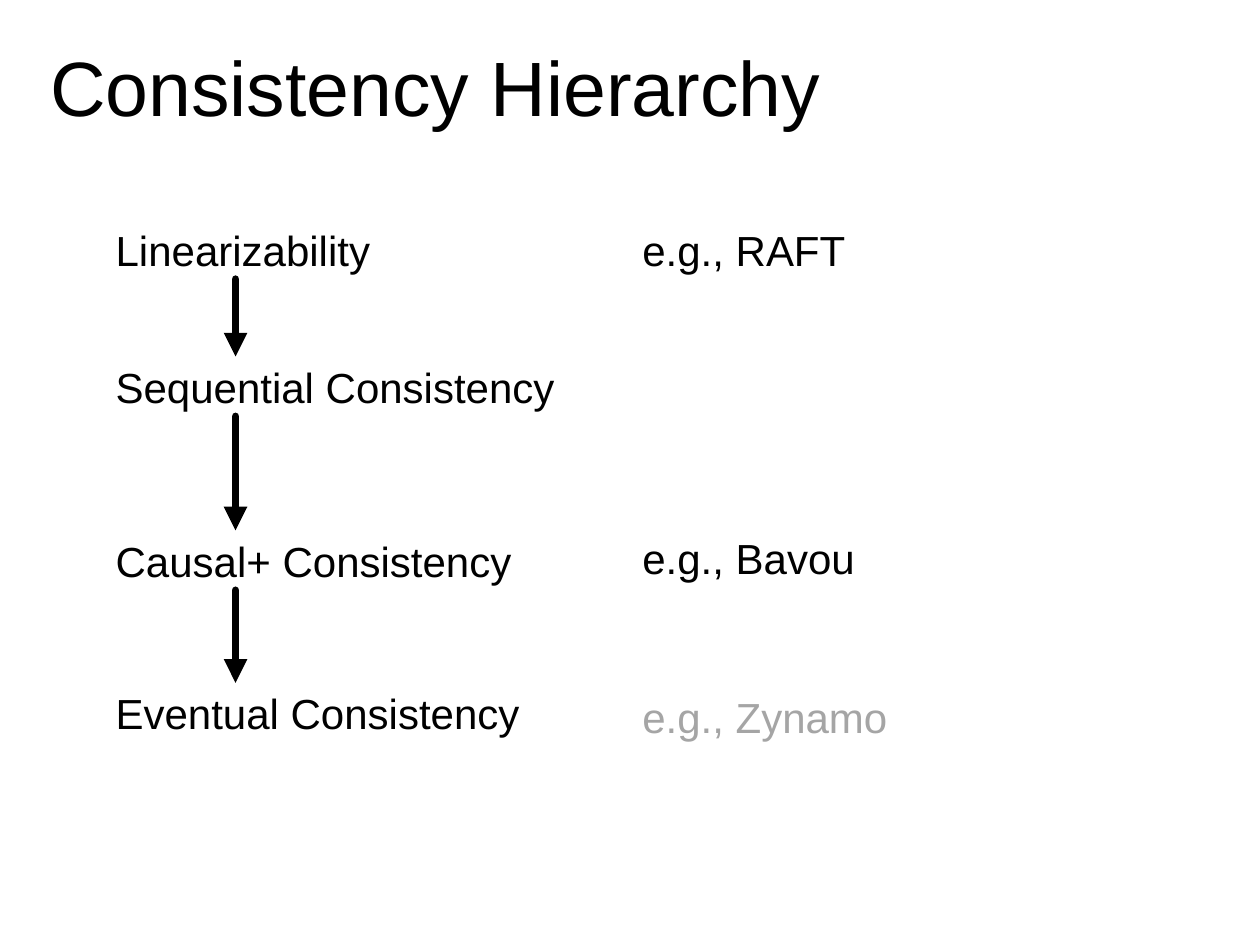
from lxml import etree
from pptx import Presentation
from pptx.dml.color import RGBColor
from pptx.enum import shapes, text
from pptx.oxml.ns import qn
from pptx.util import Pt

BLACK, GRAY = "000000", "A5A5A5"
LEVEL_X, EXAMPLE_X, ARROW_X = 59, 360, 134.6
LABEL_H = 36

# Strongest to weakest: name, top, width
LEVELS = [
    ("Linearizability", 124.6, 168),
    ("Sequential Consistency", 203, 278),
    ("Causal+ Consistency", 302.4, 251.3),
    ("Eventual Consistency", 389.5, 256.3),
]
EXAMPLES = [
    ("e.g., RAFT", 124.6, 131, BLACK),
    ("e.g., Bavou", 301, 140.4, BLACK),
    ("e.g., Zynamo", 391.7, 162, GRAY),
]


def rgb(color):
    return RGBColor.from_string(color)


def add_text(slide, content, x, y, w, h, size, color=BLACK):
    tf = slide.shapes.add_textbox(Pt(x), Pt(y), Pt(w), Pt(h)).text_frame
    p = tf.paragraphs[0]
    p.text = content
    p.font.name = "Arial"
    p.font.size = Pt(size)
    p.font.color.rgb = rgb(color)
    return tf


def add_title(slide, content):
    tf = add_text(slide, content, 21.6, 0, 676.8, 104.4, 44)
    tf.word_wrap = True
    tf.vertical_anchor = text.MSO_ANCHOR.MIDDLE
    tf.paragraphs[0].line_spacing = 0.9


def add_label(slide, content, x, y, w, color=BLACK):
    tf = add_text(slide, content, x, y, w, LABEL_H, 24, color)
    tf.word_wrap = False
    tf.auto_size = text.MSO_AUTO_SIZE.SHAPE_TO_FIT_TEXT


def add_down_arrow(slide, x, top, bottom):
    sp = slide.shapes.add_connector(
        shapes.MSO_CONNECTOR.STRAIGHT, Pt(x), Pt(top), Pt(x), Pt(bottom))
    sp.line.width = Pt(4.5)
    sp.line.color.rgb = rgb(BLACK)
    # Round start, arrowhead at the end, no shadow
    ln = sp.line._get_or_add_ln()
    ln.set("cap", "rnd")
    etree.SubElement(ln, qn("a:round"))
    etree.SubElement(ln, qn("a:tailEnd"), type="triangle")
    etree.SubElement(ln.getparent(), qn("a:effectLst"))


def main():
    prs = Presentation()
    prs.slide_width, prs.slide_height = Pt(720), Pt(540)
    slide = prs.slides.add_slide(prs.slide_layouts[6])

    add_title(slide, "Consistency Hierarchy")

    # Consistency levels
    for name, y, w in LEVELS:
        add_label(slide, name, LEVEL_X, y, w)

    # Arrows from each level to the next weaker one
    for (_, y, _), (_, next_y, _) in zip(LEVELS, LEVELS[1:]):
        add_down_arrow(slide, ARROW_X, y + LABEL_H - 1, next_y + 0.7)

    # Example systems
    for name, y, w, color in EXAMPLES:
        add_label(slide, name, EXAMPLE_X, y, w, color)

    prs.save("out.pptx")


if __name__ == "__main__":
    main()
